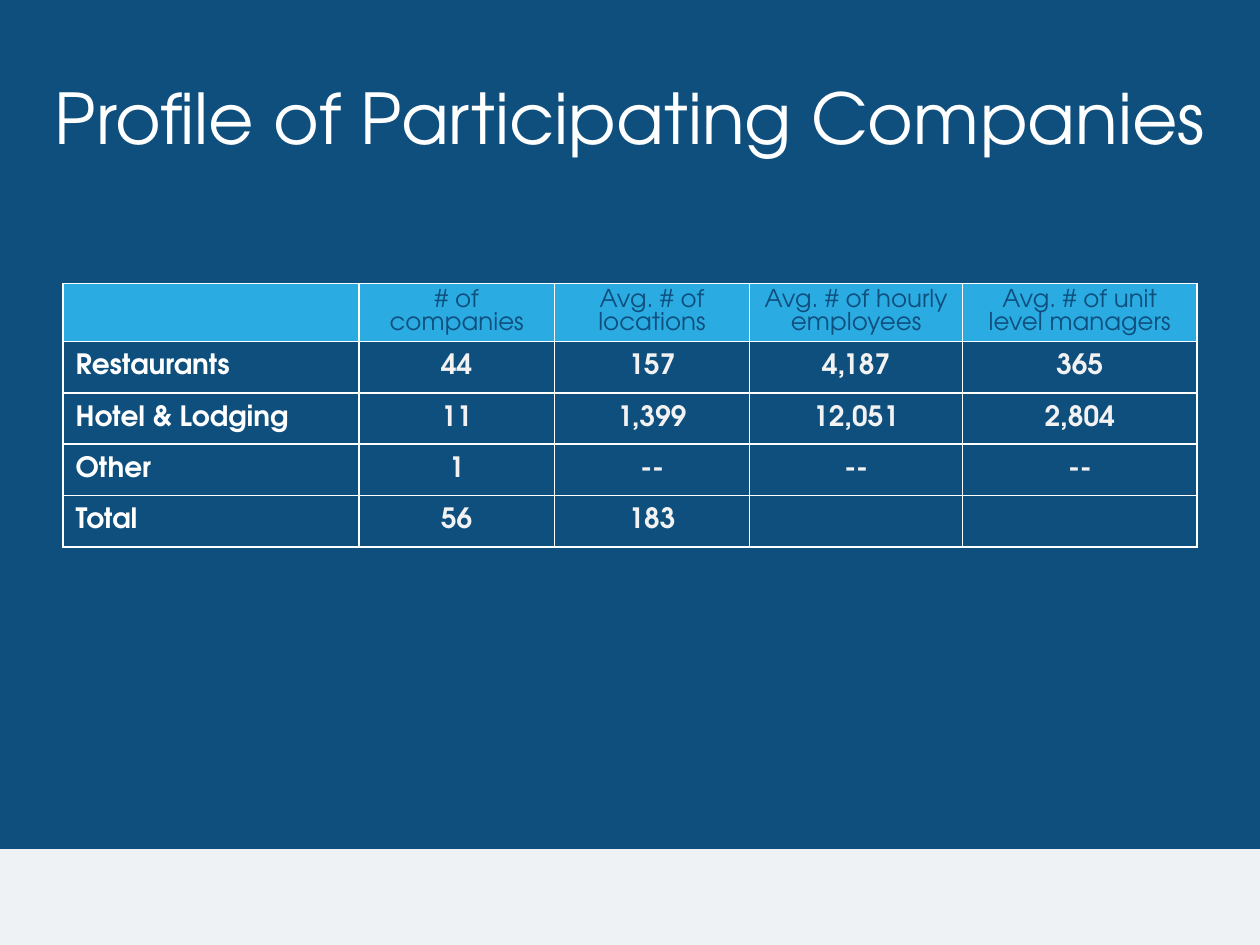
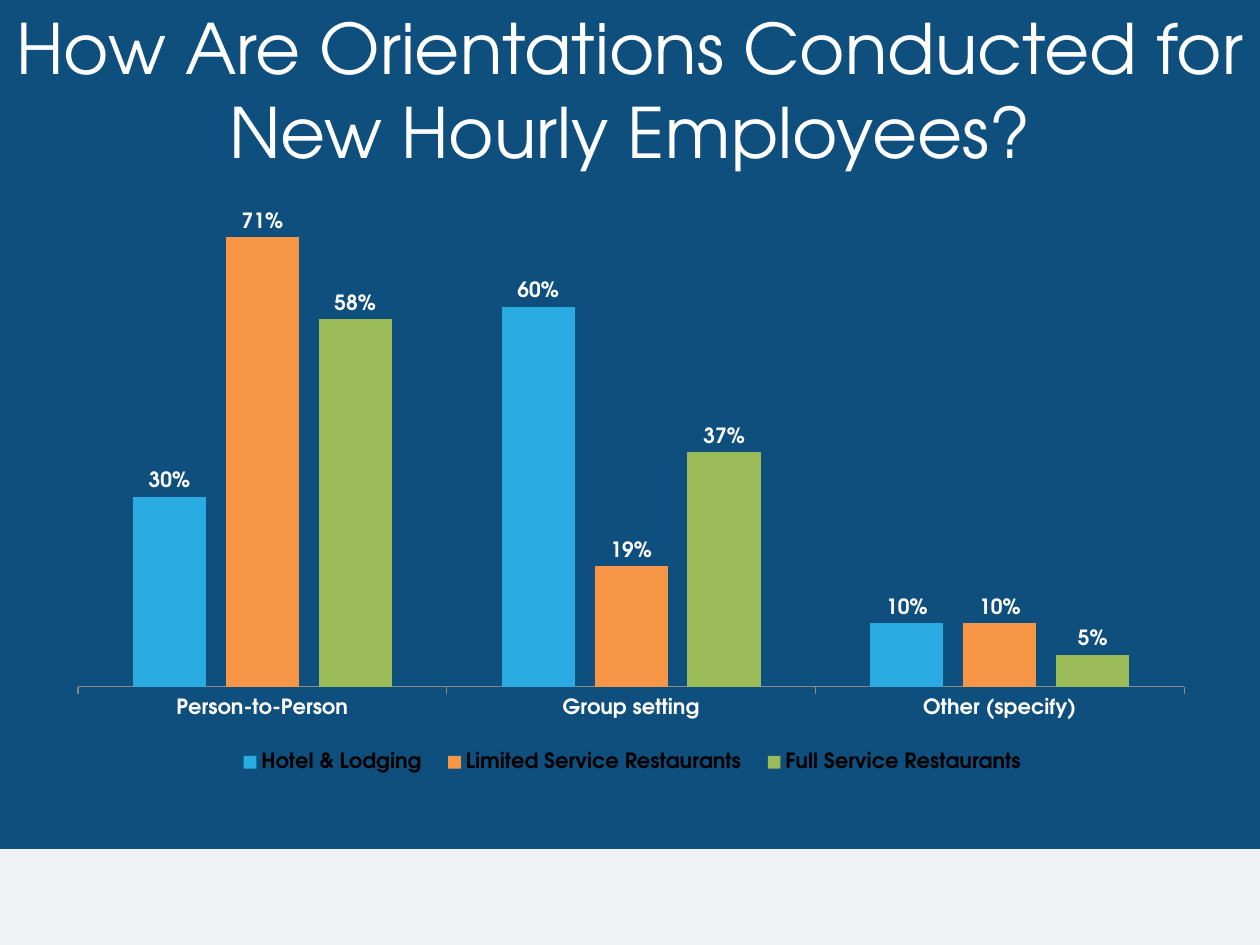
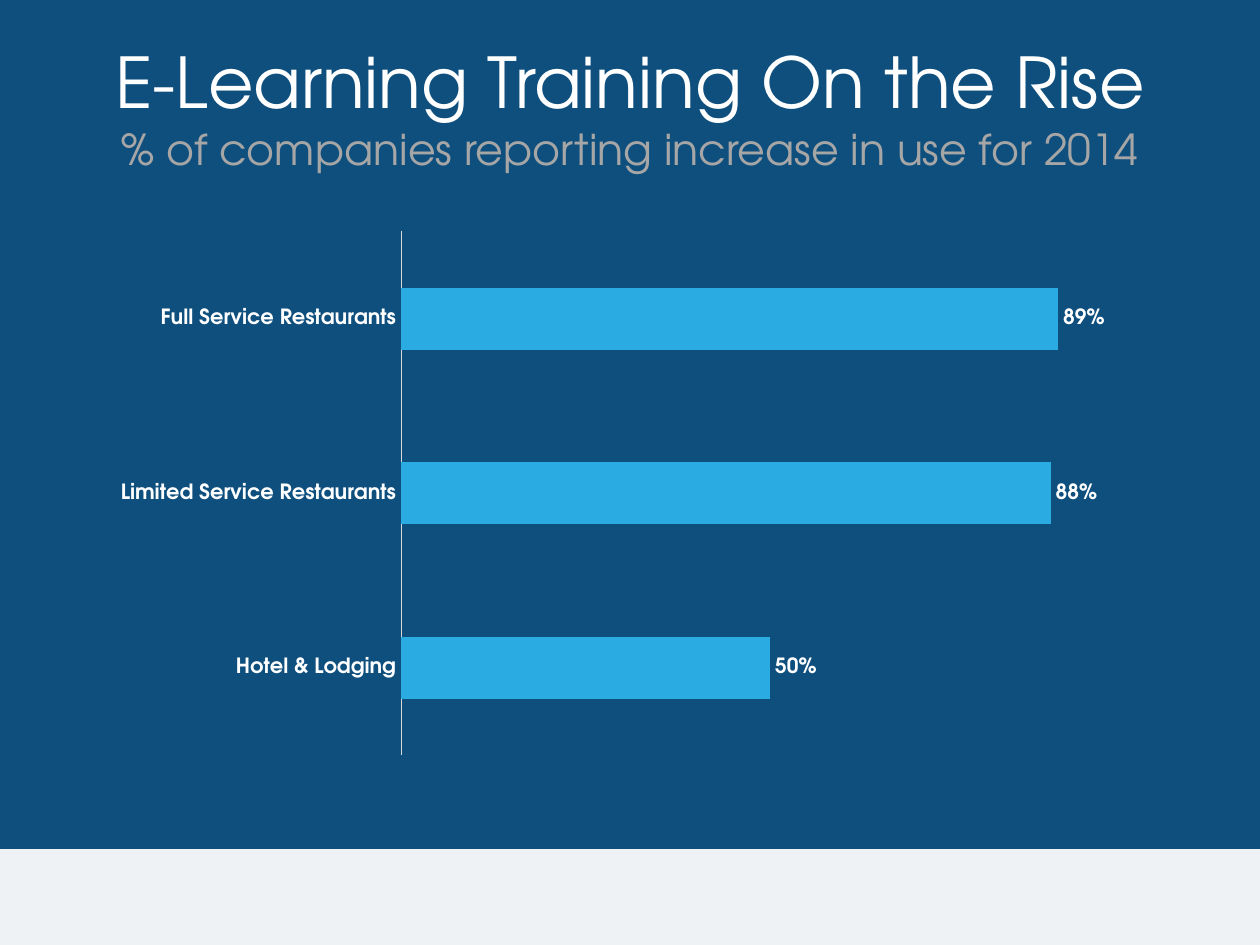
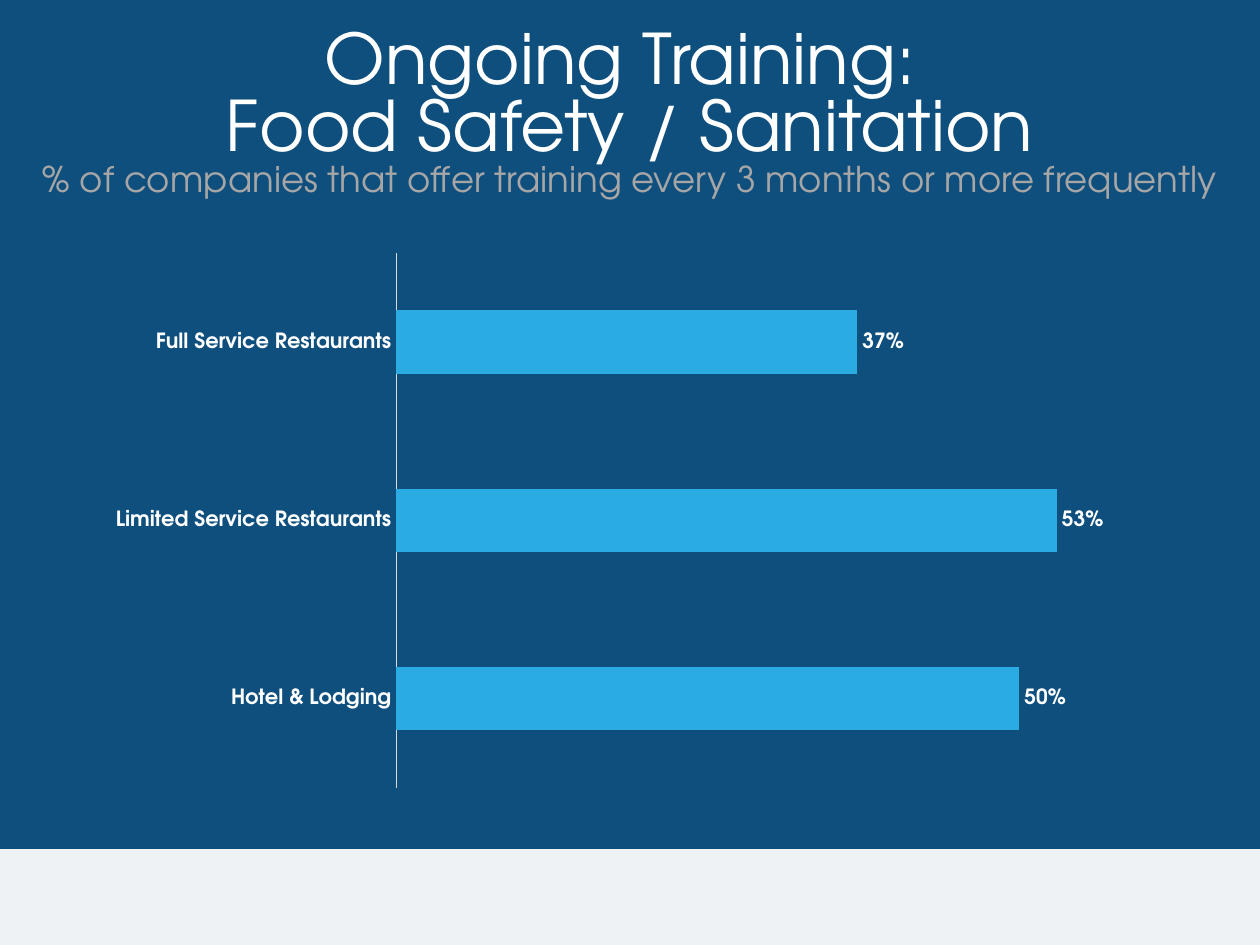
from dataclasses import dataclass
from typing import Optional

import lxml.etree
import pptx
import pptx.chart.data
import pptx.dml.color
import pptx.enum.chart
import pptx.enum.shapes
import pptx.enum.text
import pptx.oxml
import pptx.oxml.ns
import pptx.util

Inches = pptx.util.Inches
Pt = pptx.util.Pt
qn = pptx.oxml.ns.qn

FONT = "TeX Gyre Adventor"
COLORS = {
    "navy": "0F4F7E",
    "sky": "2AACE2",
    "orange": "F79646",
    "green": "9BBB59",
    "white": "FFFFFF",
    "off_white": "F2F2F2",
    "silver": "D9D9D9",
    "grey": "A6A6A6",
    "axis": "898989",
    "black": "000000",
}


@dataclass(frozen=True)
class Area:
    left: float
    top: float
    width: float
    height: float

    def lengths(self) -> tuple:
        return tuple(Inches(n) for n in (self.left, self.top, self.width, self.height))


@dataclass(frozen=True)
class Style:
    size: float
    color: str = "white"
    bold: bool = False


@dataclass(frozen=True)
class TitleLine:
    """One title paragraph; a vertical tab breaks it into runs, one style each."""
    text: str
    styles: tuple[Style, ...]


@dataclass(frozen=True)
class Series:
    name: str
    values: tuple[float, ...]
    color: str = "sky"


@dataclass(frozen=True)
class ChartPlan:
    """A percent chart; plot and legend areas are inches within the chart."""
    area: Area
    kind: pptx.enum.chart.XL_CHART_TYPE
    categories: tuple[str, ...]
    series: tuple[Series, ...]
    maximum: float
    gap: int
    overlap: int
    axis_color: str
    tick: pptx.enum.chart.XL_TICK_MARK
    plot_area: Optional[Area] = None
    legend_area: Optional[Area] = None


CHART_TEXT = Style(12, bold=True)
BAR_CATEGORIES = ("Hotel & Lodging", "Limited Service Restaurants", "Full Service Restaurants")

COLUMN_WIDTHS = (2.35, 1.55, 1.55, 1.69, 1.86)
TABLE_HEIGHT = 2.09
HEADER_HEIGHT = 0.46
PROFILE_ROWS = (
    ("", "# of companies", "Avg. # of locations", "Avg. # of hourly employees",
     "Avg. # of unit level managers"),
    ("Restaurants", "44", "157", "4,187", "365"),
    ("Hotel & Lodging", "11", "1,399", "12,051", "2,804"),
    ("Other", "1", "--", "--", "--"),
    ("Total", "56", "183", "", ""),
)


def rgb(name: str) -> pptx.dml.color.RGBColor:
    return pptx.dml.color.RGBColor.from_string(COLORS[name])


def style_font(font, style: Style) -> None:
    font.name = FONT
    font.size = Pt(style.size)
    font.bold = style.bold
    font.color.rgb = rgb(style.color)


def add_master_band(deck, page) -> None:
    """Draw the translucent footer band and move it to the slide master."""
    band = page.shapes.add_shape(
        pptx.enum.shapes.MSO_SHAPE.RECTANGLE, *Area(0, 6.74, 10, 0.76).lengths())
    band.shadow.inherit = False
    band.line.fill.background()
    band.fill.solid()
    band.fill.fore_color.rgb = rgb("white")
    color = band.element.spPr.find(".//" + qn("a:srgbClr"))
    lxml.etree.SubElement(color, qn("a:alpha"), val="93000")
    deck.slide_master.shapes.element.insert(2, band.element)


def add_title(page, area: Area, lines: list[TitleLine], spacing: float = 1.0) -> None:
    box = page.shapes.add_textbox(*area.lengths())
    frame = box.text_frame
    frame.word_wrap = True
    frame.vertical_anchor = pptx.enum.text.MSO_ANCHOR.MIDDLE
    for index, line in enumerate(lines):
        paragraph = frame.add_paragraph() if index else frame.paragraphs[0]
        paragraph.text = line.text
        paragraph.alignment = pptx.enum.text.PP_ALIGN.CENTER
        paragraph.line_spacing = spacing
        for span, style in zip(paragraph.runs, line.styles):
            style_font(span.font, style)


def set_borders(cell) -> None:
    properties = cell._tc.get_or_add_tcPr()
    for side in "LRTB":
        line = lxml.etree.SubElement(properties, qn(f"a:ln{side}"), w=str(Pt(1)))
        fill = lxml.etree.SubElement(line, qn("a:solidFill"))
        lxml.etree.SubElement(fill, qn("a:srgbClr"), val=COLORS["white"])


def add_profile_table(page) -> None:
    area = Area(0.5, 2.25, sum(COLUMN_WIDTHS), TABLE_HEIGHT)
    table = page.shapes.add_table(
        len(PROFILE_ROWS), len(COLUMN_WIDTHS), *area.lengths()).table
    table.first_row = table.horz_banding = False
    for column, width in zip(table.columns, COLUMN_WIDTHS):
        column.width = Inches(width)
    body_height = (TABLE_HEIGHT - HEADER_HEIGHT) / (len(PROFILE_ROWS) - 1)
    for row_index, texts in enumerate(PROFILE_ROWS):
        header = row_index == 0
        table.rows[row_index].height = Inches(HEADER_HEIGHT if header else body_height)
        for column_index, text in enumerate(texts):
            cell = table.cell(row_index, column_index)
            set_borders(cell)
            cell.fill.solid()
            cell.fill.fore_color.rgb = rgb("sky" if header else "navy")
            cell.vertical_anchor = pptx.enum.text.MSO_ANCHOR.MIDDLE
            cell.text_frame.text = text
            paragraph = cell.text_frame.paragraphs[0]
            if column_index:
                paragraph.alignment = pptx.enum.text.PP_ALIGN.CENTER
            if header:
                style = Style(14, "navy")
            else:
                style = Style(16, "off_white" if column_index else "white", bold=True)
            style_font(paragraph.font, style)
            for span in paragraph.runs:
                style_font(span.font, style)


def manual_layout(part: Area, whole: Area, inner: bool = False):
    """Return a c:layout element that places a part within the whole chart."""
    layout = pptx.oxml.parse_xml(
        '<c:layout xmlns:c="http://schemas.openxmlformats.org/drawingml/2006/chart">'
        "<c:manualLayout/></c:layout>")
    settings = [("layoutTarget", "inner")] if inner else []
    settings += [("xMode", "edge"), ("yMode", "edge"),
                 ("x", part.left / whole.width), ("y", part.top / whole.height),
                 ("w", part.width / whole.width), ("h", part.height / whole.height)]
    for tag, value in settings:
        lxml.etree.SubElement(layout[0], qn(f"c:{tag}"), val=str(value))
    return layout


def add_legend(chart, layout) -> None:
    chart.has_legend = True
    legend = chart.legend
    legend.position = pptx.enum.chart.XL_LEGEND_POSITION.TOP
    legend.include_in_layout = False
    style_font(legend.font, Style(12, "black", bold=True))
    for default in legend._element.findall(qn("c:layout")):
        legend._element.remove(default)
    legend._element.find(qn("c:legendPos")).addnext(layout)


def add_percent_chart(page, plan: ChartPlan) -> None:
    data = pptx.chart.data.CategoryChartData(number_format="0%")
    data.categories = plan.categories
    for entry in plan.series:
        data.add_series(entry.name, entry.values)
    chart = page.shapes.add_chart(plan.kind, *plan.area.lengths(), data).chart
    style_font(chart.font, Style(10, "black"))
    chart.has_title = False
    chart.has_legend = False

    plot = chart.plots[0]
    plot.vary_by_categories = False
    plot.gap_width = plan.gap
    plot.overlap = plan.overlap
    for series, entry in zip(plot.series, plan.series):
        series.format.fill.solid()
        series.format.fill.fore_color.rgb = rgb(entry.color)
        series.invert_if_negative = False
        labels = series.data_labels
        labels.show_value = True
        labels.number_format = "0%"
        labels.number_format_is_linked = False
        labels.position = pptx.enum.chart.XL_LABEL_POSITION.OUTSIDE_END
        style_font(labels.font, CHART_TEXT)

    value_axis = chart.value_axis
    value_axis.visible = False
    value_axis.has_major_gridlines = False
    value_axis.minimum_scale = 0
    value_axis.maximum_scale = plan.maximum
    category_axis = chart.category_axis
    category_axis.major_tick_mark = plan.tick
    category_axis.minor_tick_mark = pptx.enum.chart.XL_TICK_MARK.NONE
    category_axis.format.line.color.rgb = rgb(plan.axis_color)
    category_axis.format.line.width = Pt(0.75)
    style_font(category_axis.tick_labels.font, CHART_TEXT)

    if plan.plot_area:
        plot_area = chart._chartSpace.chart.plotArea
        for default in plot_area.findall(qn("c:layout")):
            plot_area.remove(default)
        plot_area.insert(0, manual_layout(plan.plot_area, plan.area, inner=True))
    if plan.legend_area:
        add_legend(chart, manual_layout(plan.legend_area, plan.area))


def bar_plan(area: Area, values: tuple[float, ...], maximum: float) -> ChartPlan:
    return ChartPlan(
        area, pptx.enum.chart.XL_CHART_TYPE.BAR_CLUSTERED, BAR_CATEGORIES,
        (Series("Series 1", values),), maximum, gap=182, overlap=0,
        axis_color="silver", tick=pptx.enum.chart.XL_TICK_MARK.NONE)


def main() -> None:
    deck = pptx.Presentation()
    deck.slide_width, deck.slide_height = Inches(10), Inches(7.5)
    background = deck.slide_master.background.fill
    background.solid()
    background.fore_color.rgb = rgb("navy")
    profile, orientation, learning, safety = (
        deck.slides.add_slide(deck.slide_layouts[6]) for _ in range(4))
    add_master_band(deck, profile)
    heading, fitted = Style(40), Style(39.8)

    add_profile_table(profile)
    add_title(profile, Area(0, 0.3, 10, 1.25),
              [TitleLine("Profile of Participating Companies", (heading,))])

    add_title(orientation, Area(0, 0.08, 10, 1.25), [
        TitleLine("How Are Orientations Conducted for New Hourly Employees?",
                  (Style(39.7),))])
    add_percent_chart(orientation, ChartPlan(
        Area(0.46, 1.33, 9.08, 4.92),
        pptx.enum.chart.XL_CHART_TYPE.COLUMN_CLUSTERED,
        ("Person-to-Person", "Group setting", "Other (specify)"),
        (Series("Hotel & Lodging", (0.3, 0.6, 0.1)),
         Series("Limited Service Restaurants", (0.71, 0.19, 0.1), "orange"),
         Series("Full Service Restaurants", (0.58, 0.37, 0.05), "green")),
        maximum=0.8, gap=150, overlap=-27, axis_color="axis",
        tick=pptx.enum.chart.XL_TICK_MARK.OUTSIDE,
        plot_area=Area(0.16, 0.1, 8.78, 4.02),
        legend_area=Area(1.32, 4.57, 6.48, 0.3)))

    add_title(learning, Area(0, 0.22, 10, 1.25), [
        TitleLine("E-Learning Training On the Rise", (heading,)),
        TitleLine("% of companies reporting increase in use for 2014",
                  (Style(24.4, "grey"),))])
    add_percent_chart(
        learning, bar_plan(Area(0.79, 1.75, 8.42, 4.33), (0.5, 0.88, 0.89), 1))

    add_percent_chart(
        safety, bar_plan(Area(0.75, 1.92, 8.5, 4.42), (0.5, 0.53, 0.37), 0.6))
    add_title(safety, Area(0, 0, 10, 1.83), [
        TitleLine("Ongoing Training: ", (fitted,)),
        TitleLine("Food Safety / Sanitation\v"
                  "% of companies that offer training every 3 months or more frequently",
                  (fitted, Style(20.3, "grey")))], spacing=0.8)

    deck.save("out.pptx")


if __name__ == "__main__":
    main()
